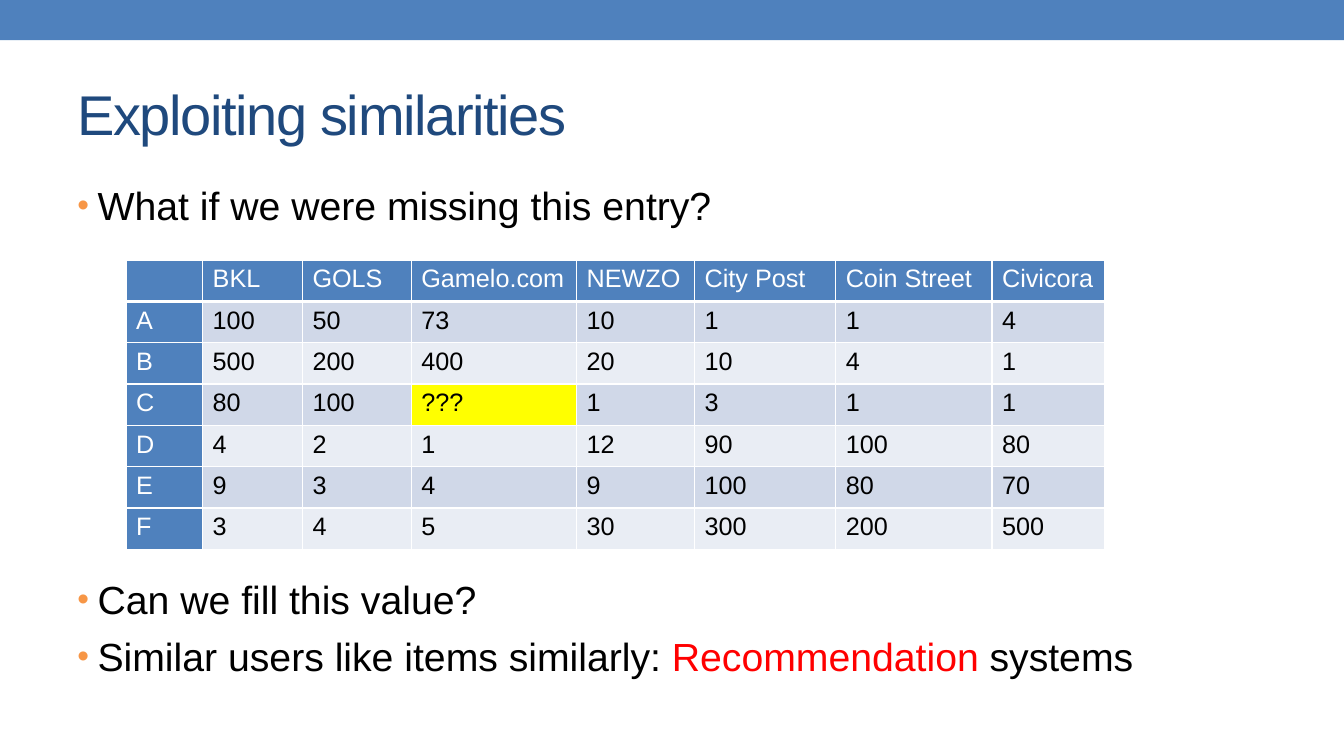
from lxml import etree
from pptx import Presentation
from pptx.dml.color import RGBColor
from pptx.enum.shapes import MSO_SHAPE as SHAPE
from pptx.enum.text import MSO_ANCHOR as ANCHOR
from pptx.oxml.ns import qn
from pptx.util import Inches, Pt

BLUE, NAVY, ORANGE = "4F81BD", "1F497D", "F79646"
WHITE, BLACK, RED, YELLOW = "FFFFFF", "000000", "FF0000", "FFFF00"
BANDS = ["E9EDF4", "D0D8E8"]

COL_WIDTHS = [0.76, 0.99, 1.08, 1.64, 1.17, 1.4, 1.55, 1.12]
ROW_HEIGHT = 0.41
VISITS = [
    ["", "BKL", "GOLS", "Gamelo.com", "NEWZO", "City Post", "Coin Street", "Civicora"],
    ["A", "100", "50", "73", "10", "1", "1", "4"],
    ["B", "500", "200", "400", "20", "10", "4", "1"],
    ["C", "80", "100", "???", "1", "3", "1", "1"],
    ["D", "4", "2", "1", "12", "90", "100", "80"],
    ["E", "9", "3", "4", "9", "100", "80", "70"],
    ["F", "3", "4", "5", "30", "300", "200", "500"],
]
# Space before in points, then the runs; the second bullet clears the table.
BULLETS = [
    (6, [("What if we were missing this entry?", BLACK)]),
    (248, [("Can we fill this value?", BLACK)]),
    (7, [("Similar users like items similarly: ", BLACK),
         ("Recommendation", RED), (" systems", BLACK)]),
]


def rgb(color):
    return RGBColor.from_string(color)


def add_run(p, text, size, color):
    r = p.add_run()
    r.text = text
    for name, value in {"name": "Arial", "size": Pt(size)}.items():
        setattr(r.font, name, value)
    r.font.color.rgb = rgb(color)
    return r


def add_text_frame(s, x, y, w, h, anchor):
    tf = s.shapes.add_textbox(Inches(x), Inches(y), Inches(w), Inches(h)).text_frame
    tf.word_wrap = True
    tf.vertical_anchor = anchor
    return tf


def add_band(s, x, y, w, h):
    sp = s.shapes.add_shape(SHAPE.RECTANGLE, Inches(x), Inches(y), Inches(w), Inches(h))
    sp.shadow.inherit = False
    sp.fill.solid()
    sp.fill.fore_color.rgb = rgb(BLUE)
    sp.line.fill.background()


def add_title(s, x, y, w, h):
    tf = add_text_frame(s, x, y, w, h, ANCHOR.MIDDLE)
    r = add_run(tf.paragraphs[0], "Exploiting similarities", 40, NAVY)
    r.font._element.set("spc", "-100")


def set_bullet(p, indent):
    pPr = p._p.get_or_add_pPr()
    pPr.set("marL", str(Inches(indent)))
    pPr.set("indent", str(-Inches(indent)))
    color = etree.SubElement(pPr, qn("a:buClr"))
    etree.SubElement(color, qn("a:srgbClr"), val=ORANGE)
    etree.SubElement(pPr, qn("a:buSzPct"), val="85000")
    etree.SubElement(pPr, qn("a:buFont"), typeface="Arial")
    etree.SubElement(pPr, qn("a:buChar"), char="•")


def add_bullets(s, x, y, w, h):
    tf = add_text_frame(s, x, y, w, h, ANCHOR.TOP)
    for i, (gap, runs) in enumerate(BULLETS):
        p = tf.add_paragraph() if i else tf.paragraphs[0]
        p.space_before = Pt(gap)
        set_bullet(p, 0.2)
        for text, color in runs:
            add_run(p, text, 28, color)


def set_borders(cell, widths):
    """Draw white borders; widths maps each side's tag to points."""
    tcPr = cell._tc.get_or_add_tcPr()
    for i, (side, width) in enumerate(widths.items()):
        ln = etree.Element(qn(f"a:{side}"), w=str(Pt(width)))
        fill = etree.SubElement(ln, qn("a:solidFill"))
        etree.SubElement(fill, qn("a:srgbClr"), val=WHITE)
        tcPr.insert(i, ln)


def cell_fill(row, col, text):
    if row == 0 or col == 0:
        return BLUE
    return YELLOW if text == "???" else BANDS[row % 2]


def add_visits_table(s, x, y):
    rows, cols = len(VISITS), len(COL_WIDTHS)
    table = s.shapes.add_table(rows, cols, Inches(x), Inches(y), Inches(sum(COL_WIDTHS)),
                               Inches(ROW_HEIGHT * rows)).table
    for column, width in zip(table.columns, COL_WIDTHS):
        column.width = Inches(width)
    for row, values in enumerate(VISITS):
        table.rows[row].height = Inches(ROW_HEIGHT)
        for col, text in enumerate(values):
            cell = table.cell(row, col)
            cell.fill.solid()
            cell.fill.fore_color.rgb = rgb(cell_fill(row, col, text))
            set_borders(cell, {"lnL": 1, "lnR": 1, "lnT": 1, "lnB": 1 if row else 3})
            if text:
                color = BLACK if row and col else WHITE
                r = add_run(cell.text_frame.paragraphs[0], text, 18, color)
                r.font.bold = False


def main():
    prs = Presentation()
    prs.slide_width, prs.slide_height = Inches(13.33), Inches(7.5)
    s = prs.slides.add_slide(prs.slide_layouts[6])
    add_band(s, 0, 0, 13.33, 0.4)
    add_title(s, 0.67, 0.58, 12, 1.08)
    add_bullets(s, 0.67, 1.75, 12, 5.33)
    add_visits_table(s, 1.25, 2.58)
    prs.save("out.pptx")


if __name__ == "__main__":
    main()
